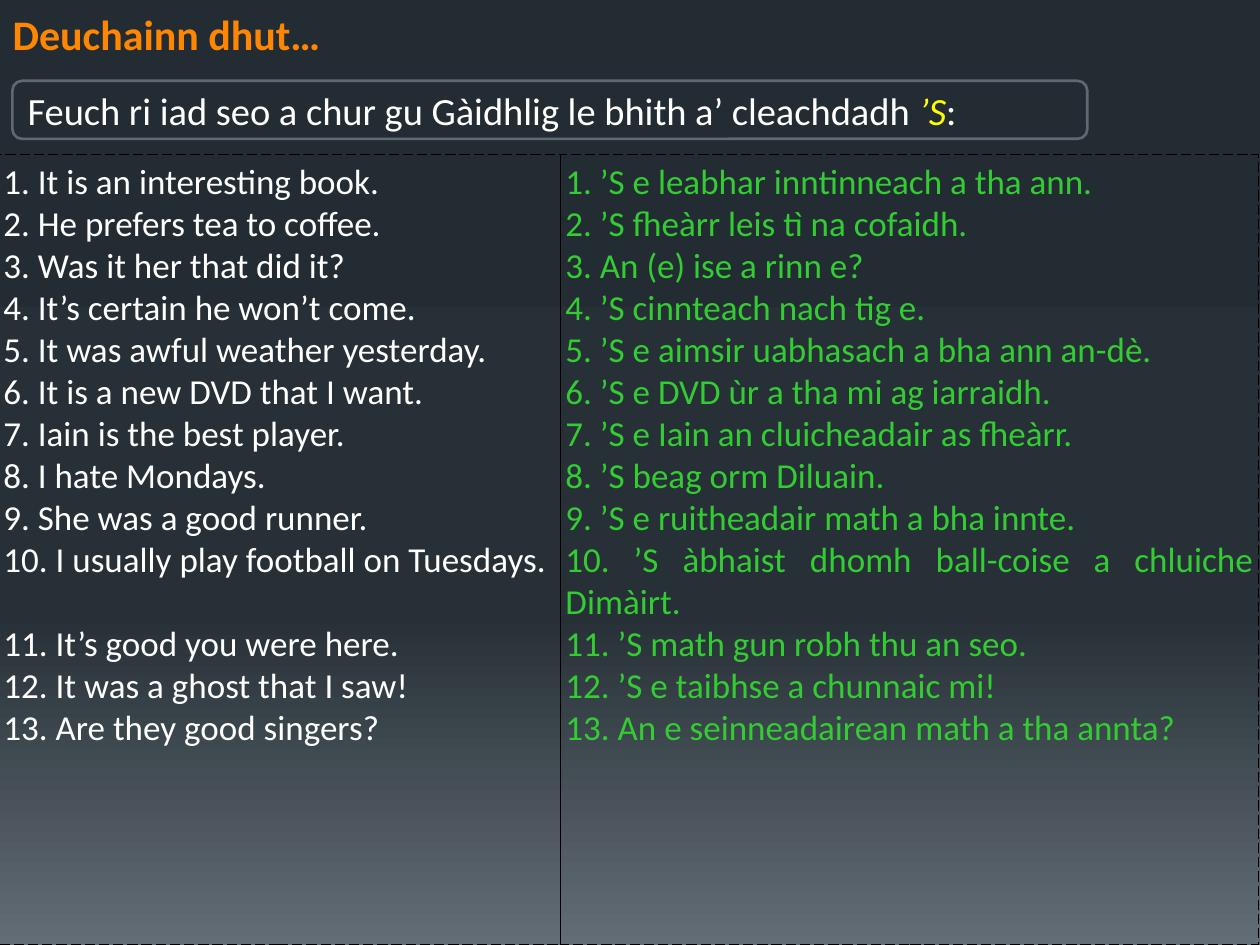
from lxml import etree
from pptx import Presentation
from pptx.dml.color import RGBColor
from pptx.enum.dml import MSO_LINE
from pptx.enum.shapes import MSO_SHAPE
from pptx.enum.text import MSO_ANCHOR, MSO_AUTO_SIZE, PP_ALIGN
from pptx.oxml.ns import qn
from pptx.util import Cm, Pt

LEFT, JUST = PP_ALIGN.LEFT, PP_ALIGN.JUSTIFY
TOP, MID, LOW = MSO_ANCHOR.TOP, MSO_ANCHOR.MIDDLE, MSO_ANCHOR.BOTTOM
RECT, ROUND = MSO_SHAPE.RECTANGLE, MSO_SHAPE.ROUNDED_RECTANGLE
DASH = MSO_LINE.LONG_DASH
NO_FIT = MSO_AUTO_SIZE.NONE
FONT = "Calibri"
WIDE, HIGH = 25.4, 19.05
COLORS = {
    "title": "FF8600", "text": "FFFFFF", "mark": "FFFF00", "answer": "33CC33",
    "frame": "616873", "edge": "000000",
}
STOPS = [(0, "242C33"), (65, "273037"), (100, "636D76")]

ENGLISH = [
    "1. It is an interesting book.",
    "2. He prefers tea to coffee.",
    "3. Was it her that did it?",
    "4. It’s certain he won’t come.",
    "5. It was awful weather yesterday.",
    "6. It is a new DVD that I want.",
    "7. Iain is the best player.",
    "8. I hate Mondays.",
    "9. She was a good runner.",
    "10. I usually play football on Tuesdays.",
    "11. It’s good you were here.",
    "12. It was a ghost that I saw!",
    "13. Are they good singers?",
]
GAELIC = [
    "1. ’S e leabhar inntinneach a tha ann.",
    "2. ’S fheàrr leis tì na cofaidh.",
    "3. An (e) ise a rinn e?",
    "4. ’S cinnteach nach tig e.",
    "5. ’S e aimsir uabhasach a bha ann an-dè.",
    "6. ’S e DVD ùr a tha mi ag iarraidh.",
    "7. ’S e Iain an cluicheadair as fheàrr.",
    "8. ’S beag orm Diluain.",
    "9. ’S e ruitheadair math a bha innte.",
    "10. ’S àbhaist dhomh ball-coise a chluiche Dimàirt.",
    "11. ’S math gun robh thu an seo.",
    "12. ’S e taibhse a chunnaic mi!",
    "13. An e seinneadairean math a tha annta?",
]


def paint(slide):
    """Fill the slide with a gradient running from top to bottom."""
    fill = slide.background.fill
    fill.gradient()
    fill.gradient_angle = 270
    stops = slide.element.find(".//" + qn("a:gsLst"))
    for old in list(stops):
        stops.remove(old)
    for place, color in STOPS:
        stop = etree.SubElement(stops, qn("a:gs"), pos=str(place * 1000))
        etree.SubElement(stop, qn("a:srgbClr"), val=color)


def write(para, text, size=20, color="text", bold=False, italic=False, align=LEFT):
    """Add one formatted run to a paragraph."""
    para.alignment = align
    run = para.add_run()
    run.text = text
    font = run.font
    font.name, font.size = FONT, Pt(size)
    font.bold, font.italic = bold, italic
    font.color.rgb = RGBColor.from_string(COLORS[color])


def setup(frame, anchor, pad=None):
    """Set wrapping, anchor and optional equal margins of a text frame."""
    frame.word_wrap = True
    frame.auto_size = NO_FIT
    frame.vertical_anchor = anchor
    if pad is not None:
        frame.margin_left = frame.margin_right = Cm(pad)
        frame.margin_top = frame.margin_bottom = Cm(pad)


def outline(slide, kind, box, color, width):
    """Add an unfilled shape with a plain outline."""
    shape = slide.shapes.add_shape(kind, *map(Cm, box))
    shape.shadow.inherit = False
    shape.fill.background()
    shape.line.color.rgb = RGBColor.from_string(COLORS[color])
    shape.line.width = Pt(width)
    return shape


def header(slide, box):
    """Place the title and the framed task below it."""
    left, top, width, height = box
    title = slide.shapes.title
    title.left, title.top = Cm(left), Cm(top)
    title.width, title.height = Cm(12.7), Cm(1.32)
    setup(title.text_frame, LOW)
    write(title.text_frame.paragraphs[0], "Deuchainn dhut…", size=24, color="title", bold=True)

    area = (left + 0.25, top + 1.63, width - 3.73, height - 1.63)
    task = outline(slide, ROUND, area, "frame", 1.5)
    setup(task.text_frame, MID)
    para = task.text_frame.paragraphs[0]
    write(para, "Feuch ri iad seo a chur gu Gàidhlig le bhith a’ cleachdadh ", size=22)
    write(para, "’S", size=22, color="mark", italic=True)
    write(para, ":", size=22)


def column(slide, box, lines, color="text", align=LEFT, gaps=()):
    """Place a dashed column of lines, with a gap after each listed number."""
    shape = outline(slide, RECT, box, "edge", 0.75)
    shape.line.dash_style = DASH
    frame = shape.text_frame
    setup(frame, TOP, pad=0.1)
    for count, line in enumerate(lines, 1):
        para = frame.paragraphs[0] if count == 1 else frame.add_paragraph()
        write(para, line, color=color, align=align)
        if count in gaps:
            para.space_after = Pt(24)


def body(slide, box):
    """Split the box into the English and the Gaelic column."""
    left, top, width, height = box
    split = 11.33
    column(slide, (left, top, split, height), ENGLISH, gaps=(10,))
    column(slide, (left + split, top, width - split, height), GAELIC,
           color="answer", align=JUST)


def main():
    """Build and save the slide."""
    deck = Presentation()
    deck.slide_width, deck.slide_height = Cm(WIDE), Cm(HIGH)
    slide = deck.slides.add_slide(deck.slide_layouts[5])
    paint(slide)
    header(slide, (0, 0, WIDE, 2.8))
    body(slide, (-0.03, 3.12, WIDE, HIGH - 3.12))
    deck.save("out.pptx")


if __name__ == "__main__":
    main()
